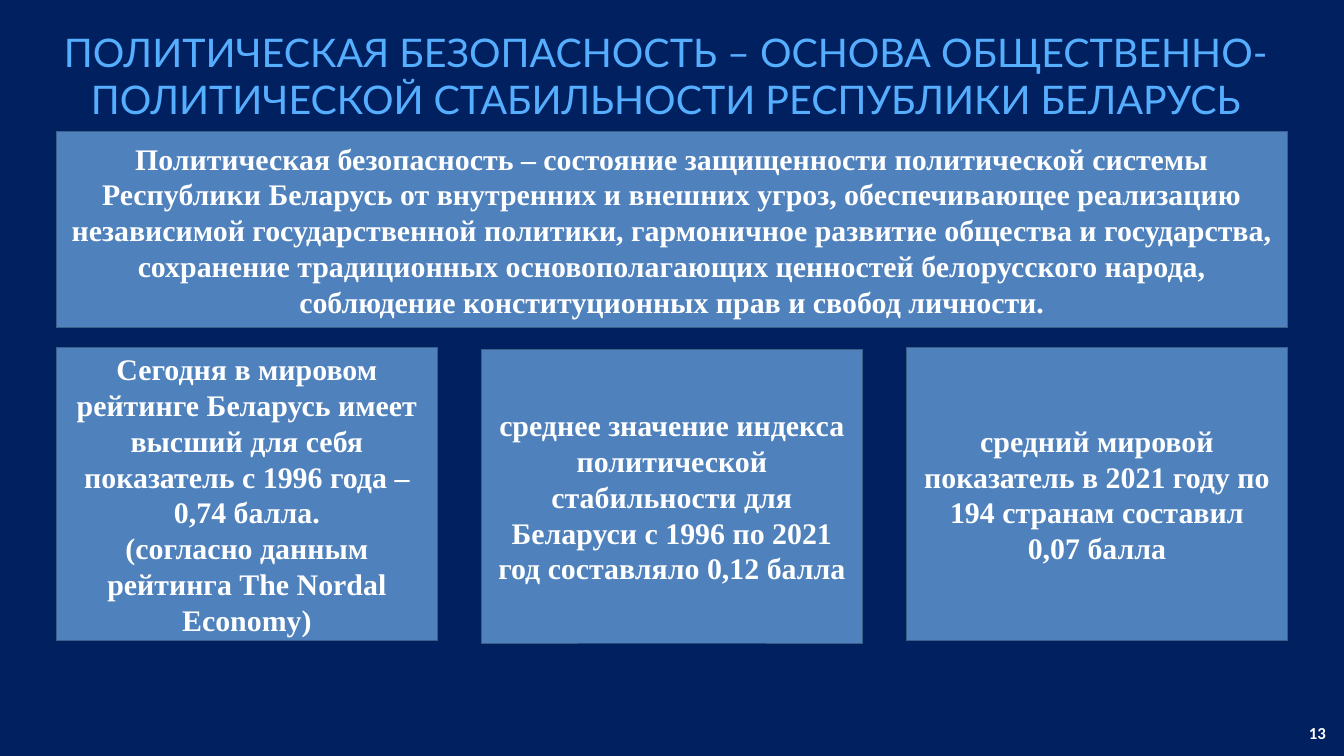
from pptx import Presentation
from pptx import util as u
from pptx.dml import color
from pptx.enum import shapes, text

COLORS = {"background": "002060", "title": "56AEFF", "panel": "4F81BD",
          "border": "3A5F8B", "white": "FFFFFF"}
TITLE = ("ПОЛИТИЧЕСКАЯ БЕЗОПАСНОСТЬ – ОСНОВА ОБЩЕСТВЕННО-ПОЛИТИЧЕСКОЙ "
         "СТАБИЛЬНОСТИ РЕСПУБЛИКИ БЕЛАРУСЬ")
DEFINITION = (
    "Политическая безопасность – состояние защищенности политической системы "
    "Республики Беларусь от внутренних и внешних угроз, обеспечивающее реализацию "
    "независимой государственной политики, гармоничное развитие общества и государства, "
    "сохранение традиционных основополагающих ценностей белорусского народа, "
    "соблюдение конституционных прав и свобод личности.")
RATINGS = [
    "Сегодня в мировом рейтинге Беларусь имеет высший для себя показатель "
    "с 1996 года – 0,74 балла.\v(согласно данным рейтинга The Nordal Economy)",
    "среднее значение индекса политической стабильности для Беларуси "
    "с 1996 по 2021 год составляло 0,12 балла",
    "средний мировой показатель в 2021 году по 194 странам составил\v0,07 балла",
]


def rgb(name):
    """Return the named palette colour."""
    return color.RGBColor.from_string(COLORS[name])


def place(shape, box):
    """Move a shape to a box of left, top, width and height in centimetres."""
    shape.left, shape.top, shape.width, shape.height = map(u.Cm, box)


def write(shape, content, font_name, size, color_name, bold, alignment, anchor):
    """Fill a shape with one formatted, wrapped paragraph."""
    frame = shape.text_frame
    frame.word_wrap = True
    frame.vertical_anchor = anchor
    paragraph = frame.paragraphs[0]
    paragraph.text = content
    paragraph.alignment = alignment
    font = paragraph.font
    font.name, font.size, font.bold = font_name, u.Pt(size), bold
    font.color.rgb = rgb(color_name)
    return paragraph


def add_title(slide, box):
    """Place the heading in the title placeholder."""
    title = slide.shapes.title
    place(title, box)
    paragraph = write(title, TITLE, "Lato", 42.2, "title", False,
                      text.PP_ALIGN.CENTER, text.MSO_ANCHOR.TOP)
    paragraph.line_spacing = u.Pt(50.6)
    frame = title.text_frame
    frame.auto_size = text.MSO_AUTO_SIZE.NONE
    frame.margin_left = frame.margin_top = frame.margin_right = frame.margin_bottom = 0


def add_panel(slide, box, content):
    """Draw a blue panel with centred bold text."""
    panel = slide.shapes.add_shape(shapes.MSO_SHAPE.RECTANGLE, *map(u.Cm, box))
    panel.shadow.inherit = False
    panel.fill.solid()
    panel.fill.fore_color.rgb = rgb("panel")
    panel.line.color.rgb = rgb("border")
    panel.line.width = u.Pt(1)
    write(panel, content, "Times New Roman", 32, "white", True,
          text.PP_ALIGN.CENTER, text.MSO_ANCHOR.MIDDLE)


def add_ratings(slide, box, card_width, middle_drop):
    """Spread the rating cards evenly over a box, the middle one slightly lower."""
    left, top, width, height = box
    step = (width - card_width) / (len(RATINGS) - 1)
    for index, content in enumerate(RATINGS):
        drop = middle_drop if index == 1 else 0
        add_panel(slide, (left + index * step, top + drop, card_width, height), content)


def add_page_number(slide, box, number):
    """Write the page number in the corner."""
    label = slide.shapes.add_textbox(*map(u.Cm, box))
    write(label, number, "Calibri", 18, "white", True,
          text.PP_ALIGN.RIGHT, text.MSO_ANCHOR.MIDDLE)


def main():
    """Build and save the slide."""
    presentation = Presentation()
    presentation.slide_width, presentation.slide_height = u.Cm(50.8), u.Cm(28.58)
    slide = presentation.slides.add_slide(presentation.slide_layouts[5])
    slide.background.fill.solid()
    slide.background.fill.fore_color.rgb = rgb("background")
    add_title(slide, (0, 1.07, 50.37, 3.58))
    add_panel(slide, (2.12, 4.98, 46.56, 7.42), DEFINITION)
    add_ratings(slide, (2.12, 13.13, 46.56, 11.1), card_width=14.43, middle_drop=0.08)
    add_page_number(slide, (44.45, 27.2, 5.92, 1.02), "13")
    presentation.save("out.pptx")


if __name__ == "__main__":
    main()
